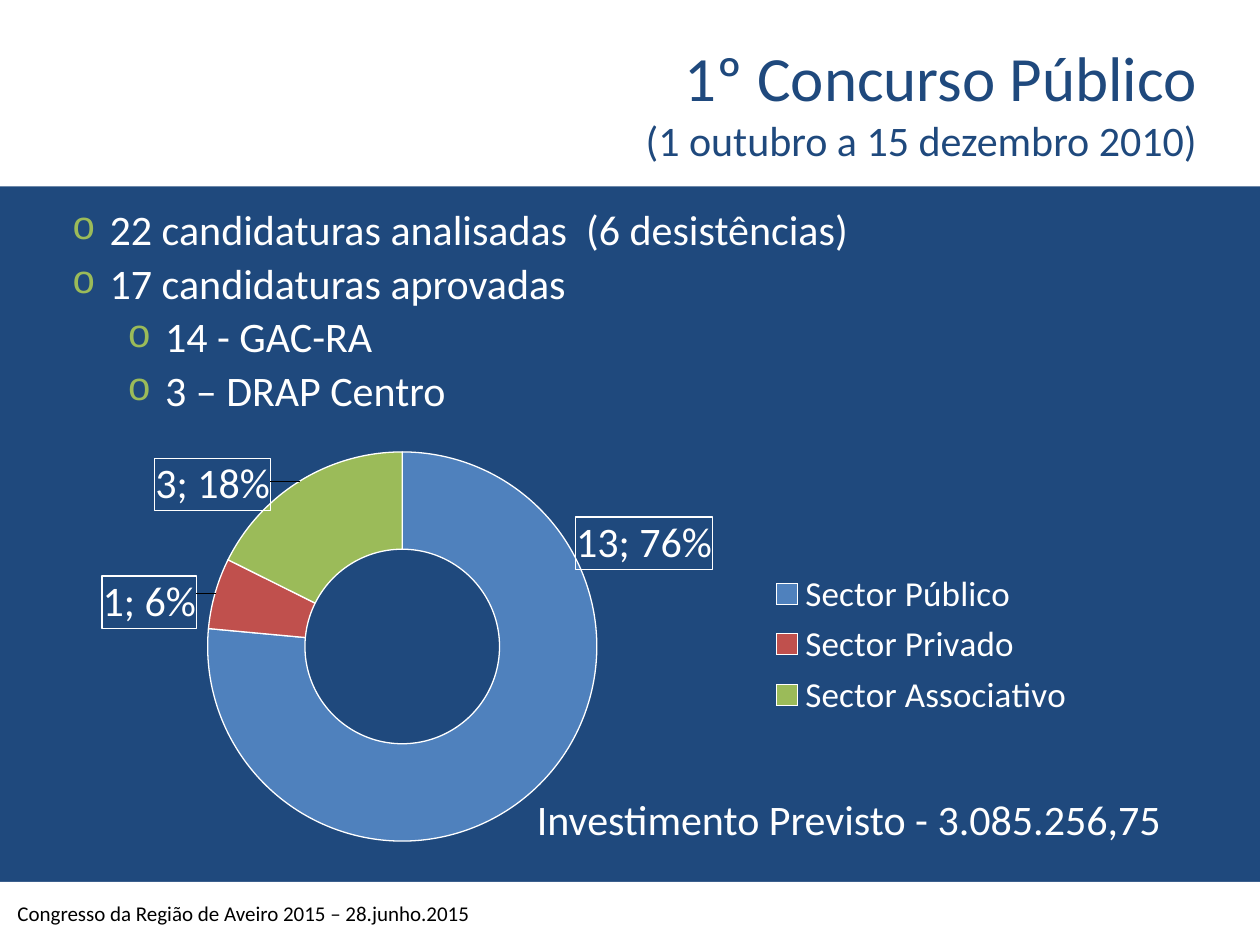
"""Build the slide on the first public call, with its list and sector doughnut chart."""
from copy import deepcopy
from dataclasses import dataclass

from lxml import etree
from pptx import Presentation
from pptx import util as u
from pptx.chart.data import CategoryChartData
from pptx.dml.color import RGBColor
from pptx.enum import chart as chart_enum, shapes, text
from pptx.oxml import parse_xml
from pptx.oxml.ns import nsdecls, qn

COLOURS = {
    "navy": "1F497D", "white": "FFFFFF", "black": "000000",
    "blue": "4F81BD", "red": "C0504D", "green": "9BBB59",
}
FONT = "Calibri"


@dataclass
class Band:
    top: float
    height: float


@dataclass
class Line:
    wording: str
    indent: float
    level: int = 0
    space_before: float = 4.8
    bullet: bool = True


@dataclass
class Sector:
    name: str
    count: int
    colour: str
    label_x: float
    label_y: float


BANDS = [Band(7, 0.5), Band(0, 1.48)]
LINES = [
    Line("22 candidaturas analisadas  (6 desistências)", 0.3, space_before=0),
    Line("17 candidaturas aprovadas", 0.3),
    Line("14 - GAC-RA", 0.74, level=1),
    Line("3 – DRAP Centro", 0.74, level=1),
    Line("Investimento Previsto - 3.085.256,75", 3.69, space_before=219, bullet=False),
]
SECTORS = [
    Sector("Sector Público", 13, "blue", 0.14, -0.5),
    Sector("Sector Privado", 1, "red", -0.11, -0.01),
    Sector("Sector Associativo", 3, "green", -0.11, -0.09),
]


def rgb(colour: str) -> RGBColor:
    """Return a named colour."""
    return RGBColor.from_string(COLOURS[colour])


def style_font(font, size: float, colour: str) -> None:
    """Set the typeface, size and colour of a font."""
    font.name = FONT
    font.size = u.Pt(size)
    font.color.rgb = rgb(colour)


def place(shape, left: float, top: float, width: float, height: float) -> None:
    """Move and size a shape in inches."""
    shape.left, shape.top = u.Inches(left), u.Inches(top)
    shape.width, shape.height = u.Inches(width), u.Inches(height)


def add_band(slide, band: Band) -> None:
    """Add a full-width white band behind the placeholders."""
    shape = slide.shapes.add_shape(
        shapes.MSO_SHAPE.RECTANGLE, 0, u.Inches(band.top), u.Inches(10), u.Inches(band.height))
    shape.shadow.inherit = False
    shape.fill.solid()
    shape.fill.fore_color.rgb = rgb("white")
    shape.line.fill.background()
    slide.shapes._spTree.insert(2, shape._element)


def fill_title(title) -> None:
    """Write the right-aligned title and its smaller second line."""
    place(title, 0.51, 0.06, 8.99, 1.25)
    frame = title.text_frame
    frame.text = "1º Concurso Público\v(1 outubro a 15 dezembro 2010)"
    frame.auto_size = text.MSO_AUTO_SIZE.NONE
    frame.vertical_anchor = text.MSO_ANCHOR.BOTTOM
    frame.margin_left = frame.margin_right = frame.margin_bottom = 0
    paragraph = frame.paragraphs[0]
    paragraph.alignment = text.PP_ALIGN.RIGHT
    for run, size in zip(paragraph.runs, (36, 24)):
        style_font(run.font, size, "navy")
    line_break = paragraph._p.find(qn("a:br"))
    line_break.append(deepcopy(paragraph.runs[0]._r.rPr))


def format_line(paragraph, line: Line) -> None:
    """Write one body line with its indent, spacing and bullet."""
    paragraph.text = line.wording
    paragraph.level = line.level
    paragraph.line_spacing = 0.9
    paragraph.space_before = u.Pt(line.space_before)
    properties = paragraph._p.get_or_add_pPr()
    properties.set("marL", str(u.Inches(line.indent)))
    properties.set("indent", str(u.Inches(-0.3 if line.bullet else 0)))
    if line.bullet:
        colour = etree.SubElement(properties, qn("a:buClr"))
        etree.SubElement(colour, qn("a:srgbClr"), val=COLOURS["green"])
        etree.SubElement(properties, qn("a:buSzPct"), val="95000")
        etree.SubElement(properties, qn("a:buFont"), typeface="Courier New")
        etree.SubElement(properties, qn("a:buChar"), char="o")
    else:
        etree.SubElement(properties, qn("a:buNone"))
    style_font(paragraph.runs[0].font, 24, "white")


def fill_body(body) -> None:
    """Write the list and the investment line."""
    place(body, 0.47, 1.61, 9.03, 5.29)
    frame = body.text_frame
    frame.auto_size = text.MSO_AUTO_SIZE.NONE
    for index, line in enumerate(LINES):
        paragraph = frame.add_paragraph() if index else frame.paragraphs[0]
        format_line(paragraph, line)


def manual_layout(x: float, y: float, extra: str = "", size: str = "") -> str:
    """Return the XML of a manual chart layout."""
    return (f'<c:layout><c:manualLayout>{extra}<c:x val="{x}"/><c:y val="{y}"/>{size}'
            f'</c:manualLayout></c:layout>')


def sector_labels():
    """Return boxed value and percentage labels for every sector."""
    border = (f'<c:spPr><a:ln w="9525"><a:solidFill><a:srgbClr val="{COLOURS["white"]}"/>'
              f'</a:solidFill></a:ln></c:spPr>')
    font = (f'<c:txPr><a:bodyPr/><a:p><a:pPr><a:defRPr sz="2400"><a:solidFill>'
            f'<a:srgbClr val="{COLOURS["white"]}"/></a:solidFill><a:latin typeface="{FONT}"/>'
            f'</a:defRPr></a:pPr><a:endParaRPr lang="pt-PT"/></a:p></c:txPr>')
    flags = {"LegendKey": 0, "Val": 1, "CatName": 0, "SerName": 0, "Percent": 1, "BubbleSize": 0}
    shown = "".join(f'<c:show{name} val="{value}"/>' for name, value in flags.items())
    shared = f"{border}{font}{shown}<c:separator>; </c:separator>"
    labels = "".join(
        f'<c:dLbl><c:idx val="{index}"/>{manual_layout(sector.label_x, sector.label_y)}'
        f'{shared}</c:dLbl>' for index, sector in enumerate(SECTORS))
    return parse_xml(f'<c:dLbls {nsdecls("c", "a")}>{labels}{shared}'
                     f'<c:showLeaderLines val="1"/></c:dLbls>')


def add_sector_chart(slide) -> None:
    """Add the doughnut of approved applications by sector."""
    data = CategoryChartData()
    data.categories = [sector.name for sector in SECTORS]
    data.add_series("Series 1", [sector.count for sector in SECTORS])
    chart = slide.shapes.add_chart(
        chart_enum.XL_CHART_TYPE.DOUGHNUT, u.Inches(0.51), u.Inches(3.44),
        u.Inches(8.13), u.Inches(3.35), data).chart
    style_font(chart.font, 18, "white")
    chart.has_title = False
    chart.has_legend = True
    chart.legend.position = chart_enum.XL_LEGEND_POSITION.RIGHT
    chart.legend.include_in_layout = False
    style_font(chart.legend.font, 20, "white")
    plot = chart.plots[0]
    plot.vary_by_categories = True
    series = plot.series[0]
    for index, sector in enumerate(SECTORS):
        point = series.points[index].format
        point.fill.solid()
        point.fill.fore_color.rgb = rgb(sector.colour)
        point.line.color.rgb = rgb("white")
        point.line.width = u.Pt(0.75)
    series._element.find(qn("c:cat")).addprevious(sector_labels())
    area = chart._chartSpace.chart.plotArea
    for old_layout in area.findall(qn("c:layout")):
        area.remove(old_layout)
    modes = ('<c:layoutTarget val="inner"/><c:xMode val="edge"/><c:yMode val="edge"/>')
    layout = manual_layout(0.14, 0.04, modes, '<c:w val="0.38"/><c:h val="0.93"/>')
    area.insert(0, parse_xml(layout.replace("<c:layout>", f'<c:layout {nsdecls("c")}>', 1)))
    area.find(qn("c:doughnutChart")).find(qn("c:holeSize")).set("val", "50")


def add_footer(slide) -> None:
    """Add the event name and date at the foot."""
    box = slide.shapes.add_textbox(u.Inches(0.04), u.Inches(7.05), u.Inches(4.37), u.Inches(0.4))
    frame = box.text_frame
    frame.word_wrap = True
    frame.vertical_anchor = text.MSO_ANCHOR.MIDDLE
    frame.text = "Congresso da Região de Aveiro 2015 – 28.junho.2015"
    style_font(frame.paragraphs[0].runs[0].font, 12, "black")


def main() -> None:
    """Build and save the presentation."""
    presentation = Presentation()
    presentation.slide_width, presentation.slide_height = u.Inches(10), u.Inches(7.5)
    slide = presentation.slides.add_slide(presentation.slide_layouts[1])
    slide.background.fill.solid()
    slide.background.fill.fore_color.rgb = rgb("navy")
    for band in BANDS:
        add_band(slide, band)
    fill_title(slide.shapes.title)
    fill_body(slide.placeholders[1])
    add_sector_chart(slide)
    add_footer(slide)
    presentation.save("out.pptx")


if __name__ == "__main__":
    main()
